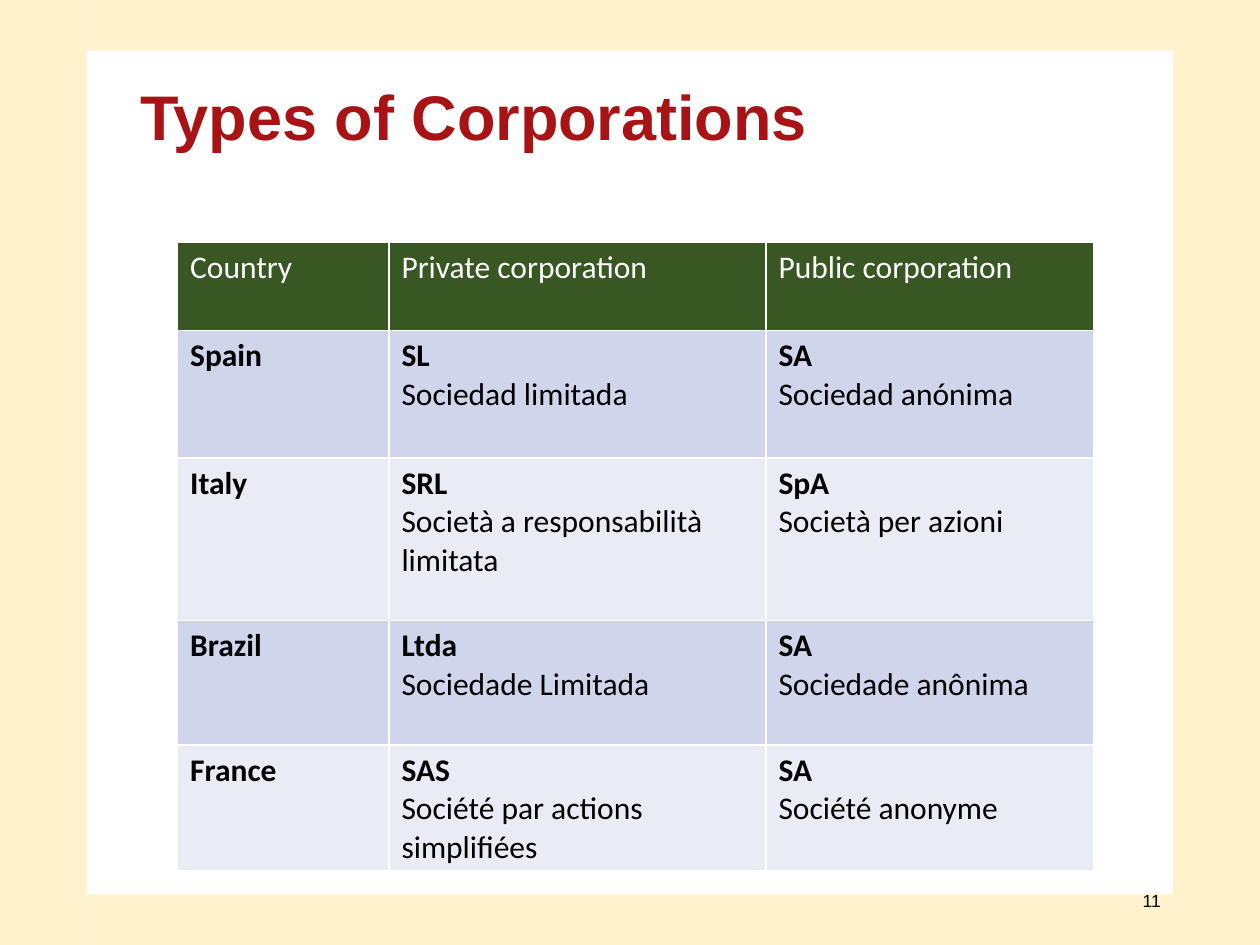
import pptx
import pptx.dml.color
import pptx.enum.text
import pptx.enum.shapes
import pptx.util
from pptx.util import Cm

RGBColor = pptx.dml.color.RGBColor
CREAM = RGBColor(0xFF, 0xF2, 0xCC)
RED = RGBColor(0xA8, 0x13, 0x15)
GREEN = RGBColor(0x38, 0x57, 0x23)
BLUE_BANDS = (RGBColor(0xCF, 0xD5, 0xEA), RGBColor(0xE9, 0xEB, 0xF5))
WHITE = RGBColor(0xFF, 0xFF, 0xFF)
BLACK = RGBColor(0, 0, 0)

HEADINGS = ("Country", "Private corporation\n", "Public corporation")
COUNTRIES = (
    ("Spain", ("SL", "Sociedad limitada"), ("SA", "Sociedad anónima")),
    ("Italy", ("SRL", "Società a responsabilità limitata"), ("SpA", "Società per azioni")),
    ("Brazil", ("Ltda", "Sociedade Limitada"), ("SA", "Sociedade anônima")),
    ("France", ("SAS", "Société par actions simplifiées"), ("SA", "Société anonyme")),
)
COLUMN_WIDTHS = (4.26, 7.6, 6.6)
ROW_HEIGHTS = (1.78, 2.57, 3.28, 2.51, 2.54)


def style_font(font, name, size, color, bold=False):
    font.name = name
    font.size = pptx.util.Pt(size)
    font.color.rgb = color
    font.bold = bold


def add_frame(slide, left, top, width, height):
    side, edge = 1.75, 1.02
    inner = width - 2 * side
    strips = (
        (0, 0, side, height),
        (width - side, 0, side, height),
        (side, 0, inner, edge),
        (side, height - edge, inner, edge),
    )
    for x, y, w, h in strips:
        strip = slide.shapes.add_shape(
            pptx.enum.shapes.MSO_SHAPE.RECTANGLE,
            Cm(left + x), Cm(top + y), Cm(w), Cm(h))
        strip.shadow.inherit = False
        strip.fill.solid()
        strip.fill.fore_color.rgb = CREAM
        strip.line.fill.background()


def add_title(slide, left, top, width, height):
    title = slide.shapes.title
    title.left, title.top = Cm(left), Cm(top)
    title.width, title.height = Cm(width), Cm(height)
    title.text_frame.text = "Types of Corporations"
    title.text_frame.vertical_anchor = pptx.enum.text.MSO_ANCHOR.BOTTOM
    heading = title.text_frame.paragraphs[0]
    heading.alignment = pptx.enum.text.PP_ALIGN.LEFT
    style_font(heading.font, "Arial", 36, RED, True)


def add_page_number(slide, left, top, width, height):
    number = slide.shapes.add_textbox(Cm(left), Cm(top), Cm(width), Cm(height)).text_frame
    number.word_wrap = True
    number.vertical_anchor = pptx.enum.text.MSO_ANCHOR.MIDDLE
    number.text = "11"
    number.paragraphs[0].alignment = pptx.enum.text.PP_ALIGN.RIGHT
    style_font(number.paragraphs[0].font, "Arial", 10, BLACK)


def fill_cell(cell, fill):
    cell.fill.solid()
    cell.fill.fore_color.rgb = fill
    return cell.text_frame.paragraphs[0]


def write_form(paragraph, abbreviation, full_name):
    style_font(paragraph.font, "Calibri", 18, BLACK)
    short = paragraph.add_run()
    short.text = abbreviation
    style_font(short.font, "Calibri", 18, BLACK, True)
    paragraph.add_line_break()
    full = paragraph.add_run()
    full.text = full_name
    style_font(full.font, "Calibri", 18, BLACK)


def add_corporations(slide, left, top, width, height):
    corporations = slide.shapes.add_table(
        len(ROW_HEIGHTS), len(COLUMN_WIDTHS),
        Cm(left), Cm(top), Cm(width), Cm(height)).table
    for column, column_width in zip(corporations.columns, COLUMN_WIDTHS):
        column.width = Cm(column_width)
    for row, row_height in zip(corporations.rows, ROW_HEIGHTS):
        row.height = Cm(row_height)

    for column, heading in enumerate(HEADINGS):
        paragraph = fill_cell(corporations.cell(0, column), GREEN)
        label, *line_end = heading.split("\n")
        paragraph.add_run().text = label
        if line_end:
            paragraph.add_line_break()
        style_font(paragraph.font, "Calibri", 18, WHITE)

    for row, (country, *forms) in enumerate(COUNTRIES, 1):
        band = BLUE_BANDS[(row - 1) % 2]
        paragraph = fill_cell(corporations.cell(row, 0), band)
        paragraph.text = country
        style_font(paragraph.font, "Calibri", 18, BLACK, True)
        for column, form in enumerate(forms, 1):
            write_form(fill_cell(corporations.cell(row, column), band), *form)


def main():
    presentation = pptx.Presentation()
    presentation.slide_width, presentation.slide_height = Cm(25.4), Cm(19.05)
    slide = presentation.slides.add_slide(presentation.slide_layouts[5])
    add_frame(slide, 0, 0, 25.4, 19.05)
    add_page_number(slide, 17.93, 17.65, 5.72, 1.02)
    add_corporations(slide, 3.58, 4.88, sum(COLUMN_WIDTHS), sum(ROW_HEIGHTS))
    add_title(slide, 2.57, 0.03, 22.83, 3.18)
    presentation.save("out.pptx")


if __name__ == "__main__":
    main()
